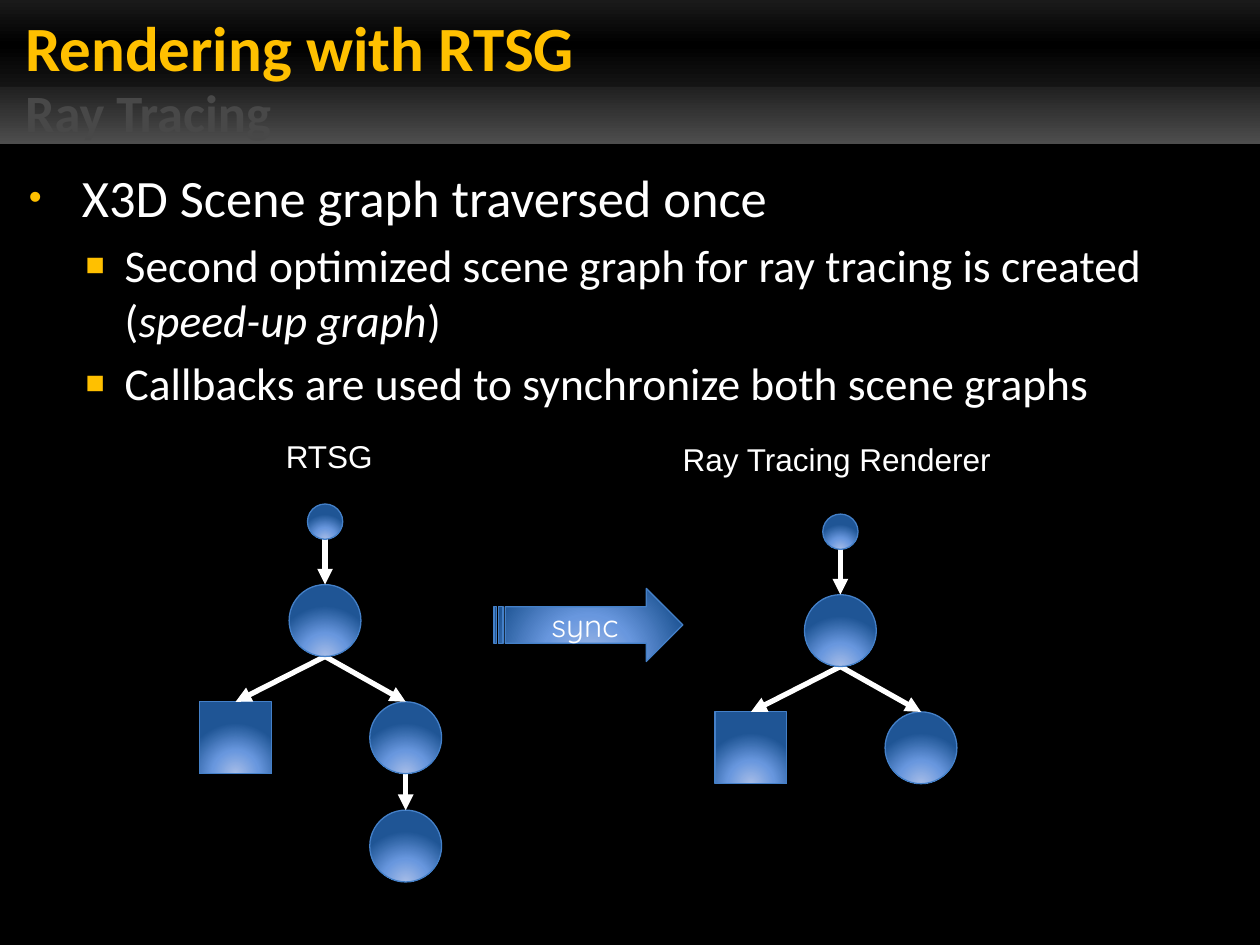
from lxml import etree
from pptx import Presentation
from pptx import util as u
from pptx.dml.color import RGBColor
from pptx.enum import shapes, text
from pptx.oxml import ns

Inches, Pt = u.Inches, u.Pt
SHAPE = shapes.MSO_SHAPE
COLORS = {
    "background": "000000", "title": "FFC000", "subtitle": "484848",
    "text": "FFFFFF", "arrow": "FFFFFF", "outline": "4480C8",
}
BAND_STOPS = [(0, "1A1A1A"), (31, "000000"), (60, "141414"), (61, "212121"), (100, "4D4D4D")]
NODE_STOPS = [(0, "A7BDE7"), (46, "6897DE"), (100, "1F5595")]
NODE_SIZE, ENTRY_SIZE = 0.57, 0.28


def color(name):
    return RGBColor.from_string(COLORS[name])


def add_element(parent, tag, **attributes):
    element = etree.SubElement(parent, ns.qn(tag))
    for key, value in attributes.items():
        element.set(key, str(value))
    return element


def fill_gradient(shape, stops, radial):
    """Fill with a vertical gradient, or a radial one centred below the shape."""
    shape.fill.gradient()
    gradient = shape._element.spPr.find(ns.qn("a:gradFill"))
    for child in list(gradient):
        gradient.remove(child)
    stop_list = add_element(gradient, "a:gsLst")
    for position, value in stops:
        stop = add_element(stop_list, "a:gs", pos=position * 1000)
        add_element(stop, "a:srgbClr", val=value)
    if radial:
        circle = add_element(gradient, "a:path", path="circle")
        add_element(circle, "a:fillToRect", l=50000, t=155000, r=50000, b=-55000)
    else:
        add_element(gradient, "a:lin", ang=90 * 60000, scaled=0)


def add_filled(page, kind, left, top, width, height, stops=NODE_STOPS, radial=True):
    shape = page.shapes.add_shape(kind, Inches(left), Inches(top), Inches(width), Inches(height))
    shape.shadow.inherit = False
    fill_gradient(shape, stops, radial)
    shape.line.color.rgb = color("outline")
    shape.line.width = Pt(0.75)
    return shape


def add_box(page, left, top, width, height, insets=(0.1, 0.05, 0.1, 0.05), anchor="TOP", wrap=True):
    box = page.shapes.add_textbox(Inches(left), Inches(top), Inches(width), Inches(height))
    frame = box.text_frame
    frame.word_wrap = wrap
    frame.vertical_anchor = text.MSO_ANCHOR[anchor]
    (frame.margin_left, frame.margin_top,
     frame.margin_right, frame.margin_bottom) = map(Inches, insets)
    return frame


def style(para, size, name="text", font="Calibri", bold=False):
    para.font.size, para.font.name, para.font.bold = Pt(size), font, bold
    para.font.color.rgb = color(name)


def set_bullet(para, symbol, margin, indent):
    properties = para._p.get_or_add_pPr()
    properties.set("marL", str(Inches(margin)))
    properties.set("indent", str(Inches(indent)))
    bullet_color = add_element(properties, "a:buClr")
    add_element(bullet_color, "a:srgbClr", val=COLORS["title"])
    add_element(properties, "a:buSzPct", val=70000)
    add_element(properties, "a:buFont", typeface="Arial")
    add_element(properties, "a:buChar", char=symbol)


def add_header(page, left, top, width, height):
    band = add_filled(page, SHAPE.RECTANGLE, left, top, width, height, BAND_STOPS, radial=False)
    band.line.fill.background()
    title = add_box(page, left, top, 6.6, 0.67, (0.2, 0, 0.1, 0), "BOTTOM").paragraphs[0]
    title.text = "Rendering with RTSG"
    style(title, 36, "title", bold=True)
    subtitle = add_box(page, left, top + 0.65, 7.92, 0.47, (0.2, 0, 0.1, 0), "MIDDLE").paragraphs[0]
    subtitle.text = "Ray Tracing"
    style(subtitle, 30, "subtitle", bold=True)


def add_bullets(page, left, top, width, height):
    frame = add_box(page, left, top, width, height, (0.16, 0.16, 0.1, 0.05))
    items = [
        (0, ["X3D Scene graph traversed once"]),
        (1, ["Second optimized scene graph for ray tracing is created (", "speed-up graph", ")"]),
        (1, ["Callbacks are used to synchronize both scene graphs"]),
    ]
    levels = [("•", 0.49, -0.42, 30), ("■", 0.83, -0.31, 26)]
    for index, (level, parts) in enumerate(items):
        para = frame.add_paragraph() if index else frame.paragraphs[0]
        symbol, margin, indent, size = levels[level]
        para.level = level
        if index:
            para.space_before = Pt(size * 0.2)
        set_bullet(para, symbol, margin, indent)
        style(para, size)
        for position, part in enumerate(parts):
            span = para.add_run()
            span.text = part
            if position == 1:
                span.font.italic = True


def add_arrow(page, start, end):
    line = page.shapes.add_connector(shapes.MSO_CONNECTOR.STRAIGHT, *map(Inches, start + end))
    line.line.color.rgb = color("arrow")
    line.line.width = Pt(3)
    add_element(line.line._get_or_add_ln(), "a:tailEnd", type="triangle")
    add_element(line._element.spPr, "a:effectLst")


def add_tree(page, left, top, has_leaf):
    """Draw a scene graph whose nodes are given by centre and top."""
    root_x, group_x, child_x = left + 1, left + 0.29, left + 1.64
    root_y, child_y, leaf_y = top + 0.64, top + 1.57, top + 2.43

    def add_node(kind, center, node_top, size=NODE_SIZE):
        add_filled(page, kind, center - size / 2, node_top, size, size)

    if has_leaf:
        add_node(SHAPE.OVAL, child_x, leaf_y)
        add_arrow(page, (child_x, child_y + NODE_SIZE), (child_x, leaf_y))
    add_node(SHAPE.OVAL, child_x, child_y)
    add_node(SHAPE.RECTANGLE, group_x, child_y)
    for center in (child_x, group_x):
        add_arrow(page, (root_x, root_y + NODE_SIZE), (center, child_y))
    add_node(SHAPE.OVAL, root_x, root_y)
    add_arrow(page, (root_x, top + ENTRY_SIZE), (root_x, root_y))
    add_node(SHAPE.OVAL, root_x, top, ENTRY_SIZE)


def add_label(page, left, top, width, caption):
    para = add_box(page, left, top, width, 0.4, wrap=False).paragraphs[0]
    para.text = caption
    style(para, 18, font="Arial")


def add_sync_arrow(page, left, top, width, height):
    arrow = add_filled(page, SHAPE.STRIPED_RIGHT_ARROW, left, top, width, height)
    arrow.text_frame.vertical_anchor = text.MSO_ANCHOR.MIDDLE
    para = arrow.text_frame.paragraphs[0]
    para.text = "sync"
    para.alignment = text.PP_ALIGN.CENTER
    style(para, 18, font="Quicksand")


def main():
    deck = Presentation()
    deck.slide_width, deck.slide_height = Inches(10), Inches(7.5)
    page = deck.slides.add_slide(deck.slide_layouts[6])
    page.background.fill.solid()
    page.background.fill.fore_color.rgb = color("background")

    # Heading and bullet list
    add_header(page, 0, 0, 10, 1.14)
    add_bullets(page, 0, 1.15, 9.99, 6.35)

    # Two scene graphs and the arrow between them
    add_tree(page, 1.58, 4, has_leaf=True)
    add_label(page, 2.17, 3.42, 0.9, "RTSG")
    add_tree(page, 5.67, 4.08, has_leaf=False)
    add_label(page, 5.32, 3.44, 2.67, "Ray Tracing Renderer")
    add_sync_arrow(page, 3.92, 4.67, 1.5, 0.58)
    deck.save("out.pptx")


if __name__ == "__main__":
    main()
